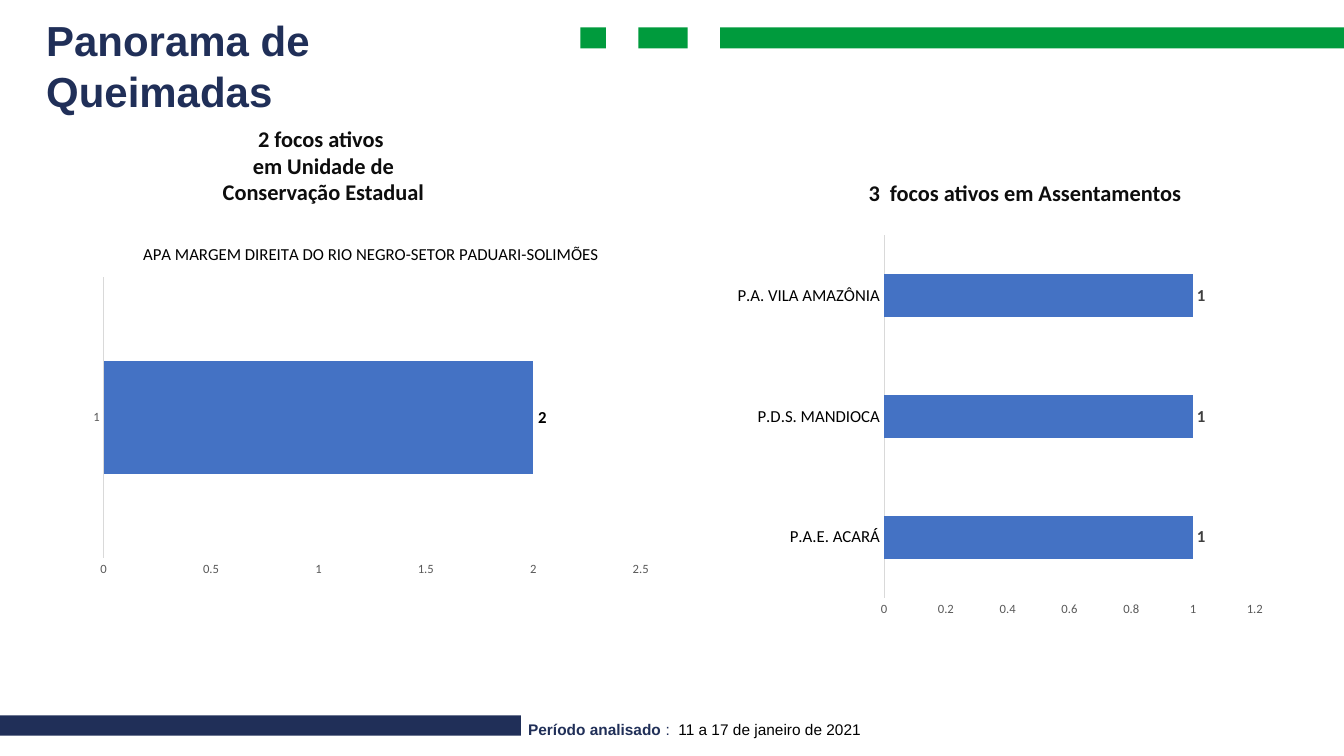
from dataclasses import dataclass

from lxml import etree
from pptx import Presentation
from pptx.chart.data import CategoryChartData
from pptx.dml.color import RGBColor
from pptx.enum.chart import XL_CHART_TYPE, XL_LABEL_POSITION, XL_TICK_MARK
from pptx.enum.shapes import MSO_SHAPE
from pptx.enum.text import MSO_ANCHOR, MSO_AUTO_SIZE, PP_ALIGN
from pptx.oxml.ns import qn
from pptx.util import Cm, Pt

RECTANGLE = MSO_SHAPE.RECTANGLE
CLUSTERED, STACKED = XL_CHART_TYPE.BAR_CLUSTERED, XL_CHART_TYPE.BAR_STACKED
INSIDE_END, OUTSIDE_END = XL_LABEL_POSITION.INSIDE_END, XL_LABEL_POSITION.OUTSIDE_END
NO_TICK = XL_TICK_MARK.NONE
LEFT, CENTER = PP_ALIGN.LEFT, PP_ALIGN.CENTER
TOP = MSO_ANCHOR.TOP
NO_AUTOFIT = MSO_AUTO_SIZE.NONE


@dataclass(frozen=True)
class Theme:
    green: str = "009B3D"
    navy: str = "202F58"
    bar: str = "4472C4"
    axis: str = "D9D9D9"
    gray: str = "595959"
    dark_gray: str = "404040"
    caption: str = "0D0D0D"
    black: str = "000000"
    heading_font: str = "Arial"
    chart_font: str = "Calibri"
    title_size: int = 30
    caption_size: int = 16
    label_size: int = 12
    footer_size: int = 11
    chart_size: int = 10
    tick_size: int = 9


THEME = Theme()


@dataclass(frozen=True)
class Box:
    left: float
    top: float
    width: float
    height: float

    def lengths(self):
        return Cm(self.left), Cm(self.top), Cm(self.width), Cm(self.height)


def style_font(font, name, size, color, bold=False):
    font.name = name
    font.size = Pt(size)
    font.bold = bold
    font.color.rgb = RGBColor.from_string(color)


def add_run(paragraph, text, *style):
    run = paragraph.add_run()
    run.text = text
    style_font(run.font, *style)


def add_band(slide, box, color):
    shape = slide.shapes.add_shape(RECTANGLE, *box.lengths())
    shape.shadow.inherit = False
    shape.fill.solid()
    shape.fill.fore_color.rgb = RGBColor.from_string(color)
    shape.line.fill.background()


def add_header_bands(slide, box):
    gap = 0.82
    left = box.left
    small, medium = 0.64, 1.24
    large = box.width - small - medium - 2 * gap
    for width in (small, medium, large):
        add_band(slide, Box(left, box.top, width, box.height), THEME.green)
        left += width + gap


def add_title(slide, box, text):
    title = slide.shapes.title
    title.left, title.top, title.width, title.height = box.lengths()
    frame = title.text_frame
    frame.word_wrap = True
    frame.auto_size = NO_AUTOFIT
    frame.vertical_anchor = TOP
    paragraph = frame.paragraphs[0]
    paragraph.alignment = LEFT
    add_run(paragraph, text, THEME.heading_font, THEME.title_size, THEME.navy, True)


def add_caption(slide, box, lines):
    frame = slide.shapes.add_textbox(*box.lengths()).text_frame
    frame.word_wrap = False
    for index, line in enumerate(lines):
        paragraph = frame.add_paragraph() if index else frame.paragraphs[0]
        paragraph.alignment = CENTER
        add_run(paragraph, line, THEME.chart_font, THEME.caption_size, THEME.caption, True)


def add_footer(slide, box, label, period):
    add_band(slide, Box(0, box.top, box.left, 0.51), THEME.navy)
    text_box = Box(box.left - 0.07, box.top - 0.02, box.width, box.height)
    frame = slide.shapes.add_textbox(*text_box.lengths()).text_frame
    frame.word_wrap = True
    paragraph = frame.paragraphs[0]
    font, size = THEME.heading_font, THEME.footer_size
    add_run(paragraph, label, font, size, THEME.navy, True)
    add_run(paragraph, ": ", font, size, THEME.navy)
    add_run(paragraph, period, font, size, THEME.black)


def style_axes(chart, category_size, category_color, maximum, step):
    category_axis, value_axis = chart.category_axis, chart.value_axis
    for axis in (category_axis, value_axis):
        axis.major_tick_mark = axis.minor_tick_mark = NO_TICK
        axis.has_major_gridlines = False
    style_font(category_axis.tick_labels.font, THEME.chart_font, category_size, category_color)
    category_axis.format.line.color.rgb = RGBColor.from_string(THEME.axis)
    category_axis.format.line.width = Pt(0.75)
    style_font(value_axis.tick_labels.font, THEME.chart_font, THEME.tick_size, THEME.gray)
    value_axis.format.line.fill.background()
    value_axis.minimum_scale = 0
    value_axis.maximum_scale = maximum
    value_axis.major_unit = step


def add_bar_chart(slide, box, kind, name, values, gap_width, label_color, label_position):
    data = CategoryChartData()
    data.categories = list(values)
    data.add_series(name, list(values.values()))
    chart = slide.shapes.add_chart(kind, *box.lengths(), data).chart
    style_font(chart.font, THEME.chart_font, THEME.chart_size, THEME.black)
    chart.has_legend = False
    chart.has_title = False
    plot = chart.plots[0]
    plot.gap_width = gap_width
    plot.vary_by_categories = False
    series = plot.series[0]
    series.format.fill.solid()
    series.format.fill.fore_color.rgb = RGBColor.from_string(THEME.bar)
    labels = series.data_labels
    labels.show_value = True
    labels.position = label_position
    style_font(labels.font, THEME.chart_font, THEME.label_size, label_color, True)
    return chart


def shift_label(point, offset, position):
    label = point.data_label
    style_font(label.font, THEME.chart_font, THEME.label_size, THEME.black, True)
    label.position = position
    element = label._get_or_add_dLbl()
    layout = etree.Element(qn("c:layout"))
    manual = etree.SubElement(layout, qn("c:manualLayout"))
    for axis, value in (("x", offset), ("y", 0)):
        etree.SubElement(manual, qn(f"c:{axis}")).set("val", str(value))
    element.insert(1, layout)


def add_conservation_panel(slide, box):
    caption = Box(box.left + 3.27, box.top - 2.7, 5.64, 2.31)
    add_caption(slide, caption, ("2 focos ativos ", "em Unidade de", "Conservação Estadual"))
    name = "APA MARGEM DIREITA DO RIO NEGRO-SETOR PADUARI-SOLIMÕES"
    chart = add_bar_chart(slide, box, STACKED, name, {"1": 2}, 150, THEME.black, INSIDE_END)
    chart.plots[0].overlap = 100
    chart.has_title = True
    paragraph = chart.chart_title.text_frame.paragraphs[0]
    add_run(paragraph, name, THEME.chart_font, THEME.label_size, THEME.black)
    chart.chart_title.include_in_layout = False
    style_axes(chart, THEME.tick_size, THEME.gray, 2.5, 0.5)
    shift_label(chart.plots[0].series[0].points[0], 0.03, INSIDE_END)


def add_settlements_panel(slide, box):
    caption = Box(box.left + 3.28, box.top - 1.33, 8.48, 0.94)
    add_caption(slide, caption, ("3  focos ativos em Assentamentos",))
    values = {"P.A.E. ACARÁ": 1, "P.D.S. MANDIOCA": 1, "P.A. VILA AMAZÔNIA": 1}
    chart = add_bar_chart(slide, box, CLUSTERED, "Series 1", values, 182, THEME.dark_gray, OUTSIDE_END)
    style_axes(chart, THEME.label_size, THEME.black, 1.2, 0.2)


def main():
    presentation = Presentation()
    presentation.slide_width, presentation.slide_height = Cm(33.87), Cm(19.05)
    slide = presentation.slides.add_slide(presentation.slide_layouts[5])
    add_header_bands(slide, Box(14.63, 0.69, 19.24, 0.53))
    add_title(slide, Box(0.91, 0.25, 12.57, 2.8), "Panorama de Queimadas")
    add_settlements_panel(slide, Box(18.31, 5.72, 13.79, 10.01))
    add_conservation_panel(slide, Box(2.06, 5.72, 14.58, 8.99))
    add_footer(slide, Box(13.13, 18.03, 13.79, 0.74), "Período analisado ", " 11 a 17 de janeiro de 2021")
    presentation.save("out.pptx")


if __name__ == "__main__":
    main()
